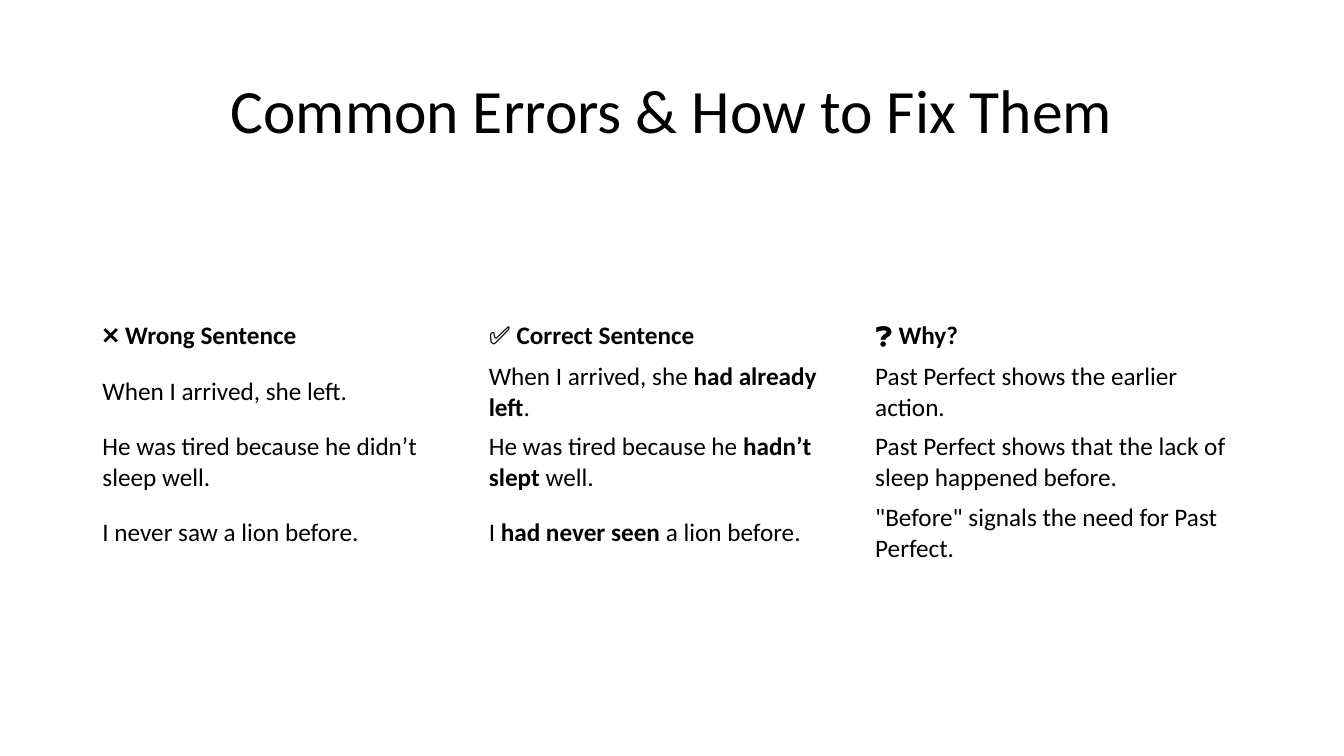
from dataclasses import dataclass

from pptx import Presentation
from pptx.dml.color import RGBColor
from pptx.enum.text import MSO_ANCHOR, PP_ALIGN
from pptx.util import Inches, Pt

MIDDLE = MSO_ANCHOR.MIDDLE
CENTER = PP_ALIGN.CENTER

FONT = "Calibri"
COLORS = {"text": "000000", "page": "FFFFFF"}
TITLE_SIZE, TABLE_SIZE = 44, 18

# The page is a grid of 160 columns by 90 rows
PAGE_WIDTH, PAGE_HEIGHT = Inches(13.333), Inches(7.5)
GRID_COLUMNS, GRID_ROWS = 160, 90
HEADER_ROWS, BODY_ROWS = 4.8, 8.4


@dataclass(frozen=True)
class Area:
    left: float
    top: float
    width: float
    height: float

    def lengths(self) -> tuple[int, int, int, int]:
        return (columns(self.left), rows(self.top),
                columns(self.width), rows(self.height))


@dataclass(frozen=True)
class Entry:
    """Cell text made of a plain, a bold and another plain part."""
    before: str = ""
    strong: str = ""
    after: str = ""


TITLE_AREA = Area(11, 4.8, 138, 17.4)
TABLE_AREA = Area(11, 37.6, 138, 30)

TITLE = "Common Errors & How to Fix Them"
ENTRIES = [
    [Entry("❌ ", "Wrong Sentence"),
     Entry("✅ ", "Correct Sentence"),
     Entry("❓ ", "Why?")],
    [Entry("When I arrived, she left."),
     Entry("When I arrived, she ", "had already left", "."),
     Entry("Past Perfect shows the earlier action.")],
    [Entry("He was tired because he didn’t sleep well."),
     Entry("He was tired because he ", "hadn’t slept", " well."),
     Entry("Past Perfect shows that the lack of sleep happened before.")],
    [Entry("I never saw a lion before."),
     Entry("I ", "had never seen", " a lion before."),
     Entry('"Before" signals the need for Past Perfect.')],
]


def columns(count: float) -> int:
    return round(PAGE_WIDTH * count / GRID_COLUMNS)


def rows(count: float) -> int:
    return round(PAGE_HEIGHT * count / GRID_ROWS)


def style_span(span, size: int, bold: bool = False) -> None:
    span.font.name = FONT
    span.font.size = Pt(size)
    span.font.bold = bold
    span.font.color.rgb = RGBColor.from_string(COLORS["text"])


def add_title(page, area: Area, text: str) -> None:
    frame = page.shapes.add_textbox(*area.lengths()).text_frame
    frame.word_wrap = True
    frame.vertical_anchor = MIDDLE
    frame.text = text
    para = frame.paragraphs[0]
    para.alignment = CENTER
    para.line_spacing = 0.9
    style_span(para.runs[0], TITLE_SIZE)


def fill_cell(cell, entry: Entry) -> None:
    cell.fill.background()
    cell.vertical_anchor = MIDDLE
    para = cell.text_frame.paragraphs[0]
    for part in (entry.before, entry.strong, entry.after):
        if part:
            span = para.add_run()
            span.text = part
            style_span(span, TABLE_SIZE, bold=part == entry.strong)


def add_error_table(page, area: Area, entries: list[list[Entry]]) -> None:
    table = page.shapes.add_table(
        len(entries), len(entries[0]), *area.lengths()).table
    table.first_row = False
    table.horz_banding = False
    for index, line in enumerate(entries):
        table.rows[index].height = rows(BODY_ROWS if index else HEADER_ROWS)
        for position, entry in enumerate(line):
            fill_cell(table.cell(index, position), entry)


def main() -> None:
    deck = Presentation()
    deck.slide_width, deck.slide_height = PAGE_WIDTH, PAGE_HEIGHT
    page = deck.slides.add_slide(deck.slide_layouts[6])
    page.background.fill.solid()
    page.background.fill.fore_color.rgb = RGBColor.from_string(COLORS["page"])

    # Heading
    add_title(page, TITLE_AREA, TITLE)

    # Wrong sentences, their corrections and the reasons
    add_error_table(page, TABLE_AREA, ENTRIES)

    deck.save("out.pptx")


if __name__ == "__main__":
    main()
